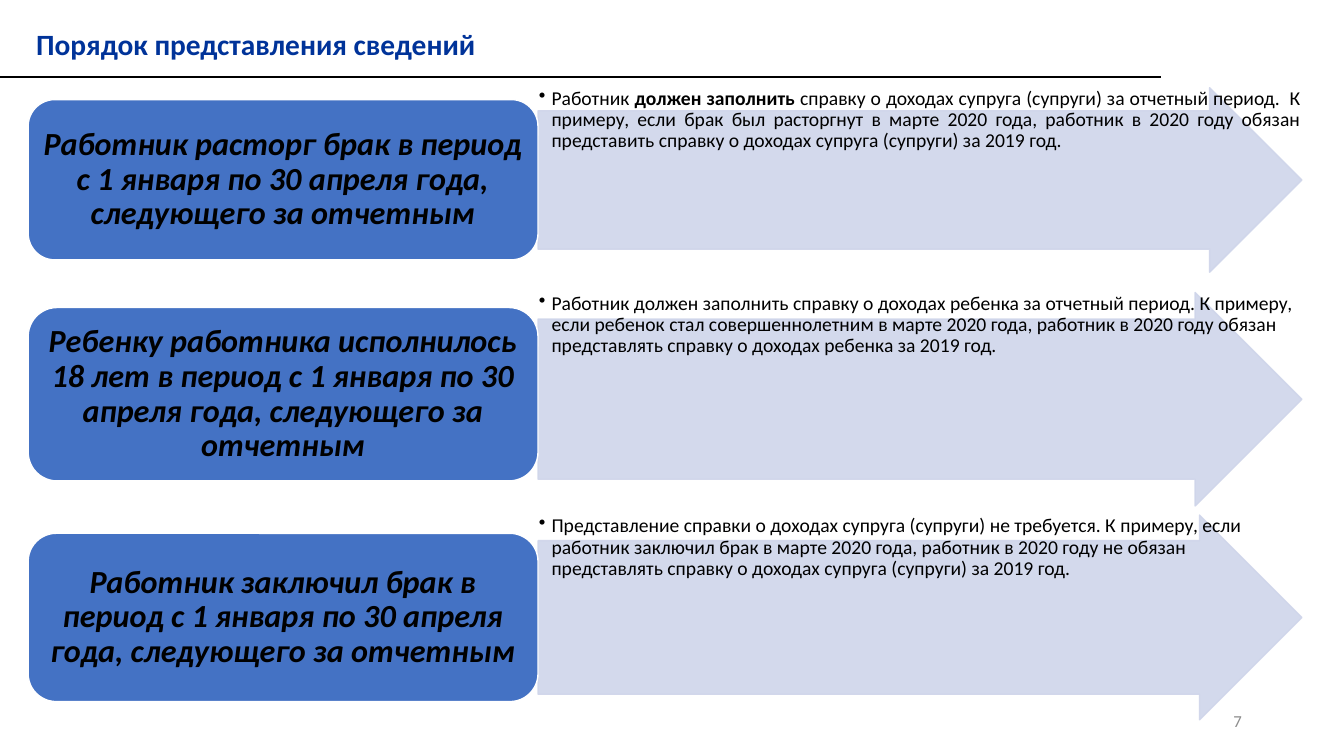
import pptx
import pptx.dml.color
import pptx.enum.shapes
import pptx.enum.text
import pptx.oxml
import pptx.oxml.ns
import pptx.util
import lxml.etree

Cm = pptx.util.Cm
Pt = pptx.util.Pt
ALIGN = pptx.enum.text.PP_ALIGN
ANCHOR = pptx.enum.text.MSO_ANCHOR
SHAPE = pptx.enum.shapes.MSO_SHAPE

CASE_LEFT, CASE_WIDTH = 0.71, 12.85
ARROW_LEFT, ARROW_WIDTH = CASE_LEFT + CASE_WIDTH, 19.25

ROWS = [
    {
        "arrow": (2.21, 4.65),
        "case": (2.51, 4.04),
        "title": "Работник расторг брак в период с 1 января по 30 апреля года, "
                 "следующего за отчетным",
        "spans": [
            ("Работник ", False),
            ("должен заполнить", True),
            (" справку о доходах супруга (супруги) за отчетный период.  К примеру, "
             "если брак был расторгнут в марте 2020 года, работник в 2020 году обязан "
             "представить справку о доходах супруга (супруги) за 2019 год.", False),
        ],
        "align": ALIGN.JUSTIFY,
    },
    {
        "arrow": (7.37, 5.38),
        "case": (7.75, 4.37),
        "title": "Ребенку работника исполнилось 18 лет в период с 1 января по 30 "
                 "апреля года, следующего за отчетным",
        "spans": [
            ("Работник должен заполнить справку о доходах ребенка за отчетный период. "
             "К примеру, если ребенок стал совершеннолетним в марте 2020 года, работник "
             "в 2020 году обязан представлять справку о доходах ребенка за 2019 год.", False),
        ],
        "align": ALIGN.LEFT,
    },
    {
        "arrow": (12.98, 5.16),
        "case": (13.44, 4.24),
        "title": "Работник заключил брак в период с 1 января по 30 апреля года, "
                 "следующего за отчетным",
        "spans": [
            ("Представление справки о доходах супруга (супруги) не требуется. К примеру, "
             "если работник заключил брак в марте 2020 года, работник в 2020 году не обязан "
             "представлять справку о доходах супруга (супруги) за 2019 год.", False),
        ],
        "align": ALIGN.LEFT,
    },
]


def color(value):
    return pptx.dml.color.RGBColor.from_string(value)


def set_insets(frame, horizontal, vertical):
    frame.margin_left = frame.margin_right = Cm(horizontal)
    frame.margin_top = frame.margin_bottom = Cm(vertical)


def style(para, size, value, align=ALIGN.LEFT, bold=None, italic=None):
    para.alignment = align
    para.font.name = "Calibri"
    para.font.size = Pt(size)
    para.font.color.rgb = color(value)
    para.font.bold = bold
    para.font.italic = italic


def add_block(slide, kind, box, fill, line):
    shape = slide.shapes.add_shape(kind, *map(Cm, box))
    shape.shadow.inherit = False
    shape.fill.solid()
    shape.fill.fore_color.rgb = color(fill)
    shape.line.color.rgb = color(line)
    shape.line.width = Pt(1)
    return shape


def add_label(slide, box, text, wrap=True):
    label = slide.shapes.add_textbox(*map(Cm, box))
    label.text_frame.word_wrap = wrap
    label.text_frame.text = text
    return label.text_frame


def add_bullet(para, indent):
    properties = para._p.get_or_add_pPr()
    properties.set("marL", str(Cm(indent)))
    properties.set("indent", str(-Cm(indent)))
    bullet = lxml.etree.SubElement(properties, pptx.oxml.ns.qn("a:buChar"))
    bullet.set("char", "•")


def add_arrow(slide, box, spans, align):
    arrow = add_block(slide, SHAPE.RIGHT_ARROW, box, "CFD5EA", "CFD5EA")
    arrow.adjustments[0] = 0.75
    arrow.adjustments[1] = 0.5
    for tint in arrow._element.spPr.iter(pptx.oxml.ns.qn("a:srgbClr")):
        lxml.etree.SubElement(tint, pptx.oxml.ns.qn("a:alpha")).set("val", "90000")

    frame = add_label(slide, box, "")
    set_insets(frame, 0.02, 0.02)
    para = frame.paragraphs[0]
    style(para, 14, "000000", align)
    para.line_spacing = 0.9
    add_bullet(para, 0.32)
    for text, bold in spans:
        span = para.add_run()
        span.text = text
        if bold:
            span.font.bold = True


def add_case(slide, box, title):
    case = add_block(slide, SHAPE.ROUNDED_RECTANGLE, box, "4472C4", "FFFFFF")
    frame = case.text_frame
    frame.word_wrap = True
    frame.vertical_anchor = ANCHOR.MIDDLE
    set_insets(frame, 0.05, 0)
    frame.text = title
    para = frame.paragraphs[0]
    style(para, 23, "000000", ALIGN.CENTER, bold=True, italic=True)
    para.line_spacing = 0.9


def add_header(slide, box):
    left, top, width, height = box
    frame = add_label(slide, (left + 0.66, top + 0.53, 11.71, 1.14),
                      "Порядок представления сведений", wrap=False)
    style(frame.paragraphs[0], 21, "003399", bold=True)

    bottom = Cm(top + height)
    rule = slide.shapes.add_connector(
        pptx.enum.shapes.MSO_CONNECTOR.STRAIGHT, Cm(left), bottom, Cm(left + width), bottom)
    rule.line.color.rgb = color("000000")
    rule.line.width = Pt(1.5)
    lxml.etree.SubElement(rule._element.spPr, pptx.oxml.ns.qn("a:effectLst"))


def add_page_number(slide, box):
    frame = add_label(slide, box, "7")
    frame.vertical_anchor = ANCHOR.MIDDLE
    style(frame.paragraphs[0], 12, "8C8C8C", ALIGN.RIGHT)


def main():
    deck = pptx.Presentation()
    deck.slide_width = Cm(33.87)
    deck.slide_height = Cm(19.05)
    page = deck.slides.add_slide(deck.slide_layouts[6])

    add_page_number(page, (23.93, 17.65, 7.62, 1.02))
    add_header(page, (0, 0, 29.26, 1.93))
    for row in ROWS:
        top, height = row["arrow"]
        add_arrow(page, (ARROW_LEFT, top, ARROW_WIDTH, height), row["spans"], row["align"])
        top, height = row["case"]
        add_case(page, (CASE_LEFT, top, CASE_WIDTH, height), row["title"])

    deck.save("out.pptx")


if __name__ == "__main__":
    main()
